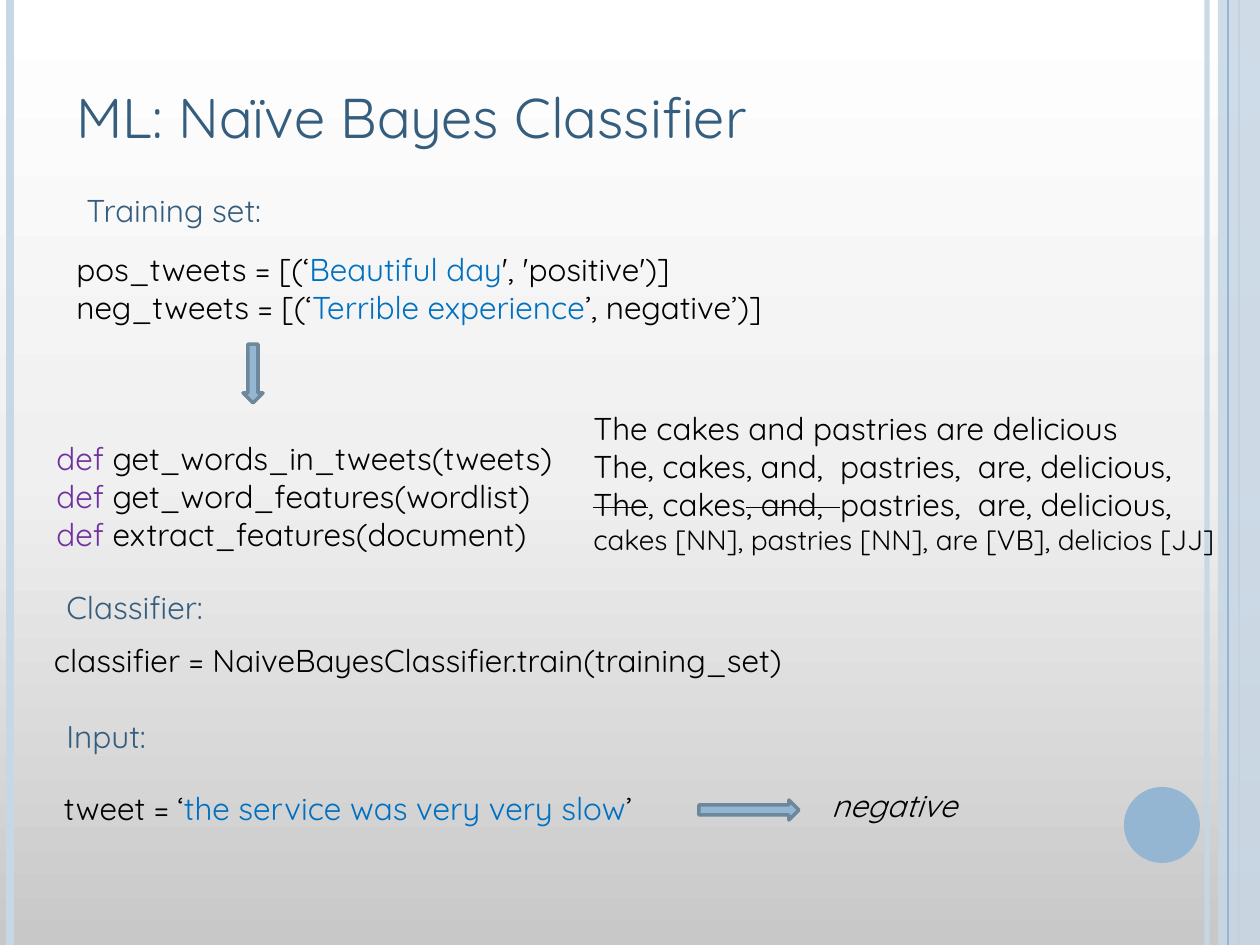
from copy import deepcopy

from lxml import etree
from pptx import Presentation
from pptx.dml.color import RGBColor
from pptx.enum.shapes import MSO_CONNECTOR, MSO_SHAPE
from pptx.enum.text import MSO_ANCHOR, MSO_AUTO_SIZE, PP_ALIGN
from pptx.oxml.ns import qn
from pptx.util import Pt

STRAIGHT = MSO_CONNECTOR.STRAIGHT
RECTANGLE, OVAL = MSO_SHAPE.RECTANGLE, MSO_SHAPE.OVAL
DOWN_ARROW, RIGHT_ARROW = MSO_SHAPE.DOWN_ARROW, MSO_SHAPE.RIGHT_ARROW
TOP, MIDDLE = MSO_ANCHOR.TOP, MSO_ANCHOR.MIDDLE
NO_AUTOFIT = MSO_AUTO_SIZE.NONE
LEFT = PP_ALIGN.LEFT

PX = 914400 / 126
WIDTH, HEIGHT = 1260, 945
FONT = "Quicksand"
COLORS = {
    "heading": "355D7E",
    "text": "000000",
    "string": "0070C0",
    "keyword": "7030A0",
    "accent": "94B6D2",
    "accent_edge": "6D879B",
    "pale": "C8D7E5",
    "top": "FFFFFF",
    "middle": "F0F0F0",
    "bottom": "C8C8C8",
}


def emu(*lengths):
    return [round(length * PX) for length in lengths]


def color(name):
    return RGBColor.from_string(COLORS[name])


def set_alpha(element, percent):
    fill_color = element.find(".//" + qn("a:srgbClr"))
    etree.SubElement(fill_color, qn("a:alpha"), val=str(percent * 1000))


def style_run(run, name="text", size=18, italic=False, strike=False):
    run.font.name = FONT
    run.font.size = Pt(size)
    run.font.color.rgb = color(name)
    if italic:
        run.font.italic = True
    if strike:
        run.font._element.set("strike", "sngStrike")


def add_figure(slide, preset, box, fill, edge=None):
    figure = slide.shapes.add_shape(preset, *emu(*box))
    figure.shadow.inherit = False
    figure.fill.solid()
    figure.fill.fore_color.rgb = color(fill)
    if edge:
        figure.line.color.rgb = color(edge)
        figure.line.width = Pt(2)
    else:
        figure.line.fill.background()
    return figure


def add_rule(slide, x, name, width):
    rule = slide.shapes.add_connector(STRAIGHT, *emu(x, 0, x, HEIGHT))
    rule.line.color.rgb = color(name)
    rule.line.width = Pt(width)
    etree.SubElement(rule._element.spPr, qn("a:effectLst"))
    return rule


def add_lines(slide, box, lines, flush=False):
    frame = slide.shapes.add_textbox(*emu(*box)).text_frame
    frame.word_wrap = True
    if flush:
        frame.vertical_anchor = MIDDLE
        frame.margin_left = frame.margin_right = 0
        frame.margin_top = frame.margin_bottom = 0
    for index, line in enumerate(lines):
        paragraph = frame.add_paragraph() if index else frame.paragraphs[0]
        for text, style in line:
            run = paragraph.add_run()
            run.text = text
            style_run(run, **style)


def add_background(slide):
    fill = slide.background.fill
    fill.gradient()
    fill.gradient_angle = 270
    stop_list = slide.element.find(".//" + qn("a:gsLst"))
    stop_list.insert(1, deepcopy(stop_list[0]))
    for stop, name, position in zip(
        fill.gradient_stops, ("top", "middle", "bottom"), (0, 0.5, 1)
    ):
        stop.color.rgb = color(name)
        stop.position = position


def add_side_bands(slide):
    inner_rule = add_rule(slide, 1207, "pale", 3)
    set_alpha(inner_rule._element.spPr, 93)
    add_rule(slide, 10, "pale", 4.5)
    add_rule(slide, 1239, "accent", 1.5)
    band = add_figure(slide, RECTANGLE, (1218, 0, 42, HEIGHT), "pale")
    set_alpha(band._element.spPr, 87)
    add_rule(slide, 1228, "accent", 0.75)
    add_figure(slide, OVAL, (1124, 787, 76, 76), "accent")


def add_title(slide, box):
    title = slide.shapes.title
    title.left, title.top, title.width, title.height = emu(*box)
    frame = title.text_frame
    frame.text = "ML: Naïve Bayes Classifier"
    frame.auto_size = NO_AUTOFIT
    frame.vertical_anchor = TOP
    frame.paragraphs[0].alignment = LEFT
    style_run(frame.paragraphs[0].runs[0], "heading", 32)


def add_heading(slide, box, text):
    add_lines(slide, box, [[(text, {"name": "heading"})]])


def add_training_set(slide, x, y):
    string = {"name": "string"}
    add_heading(slide, (x + 10, y, 205, 50), "Training set:")
    add_lines(slide, (x, y + 59, 903, 89), [
        [("pos_tweets = [(‘", {}), ("Beautiful day", string), ("', 'positive')]", {})],
        [("neg_tweets = [(‘", {}), ("Terrible experience", string),
         ("’, negative’)]", {})],
    ])
    add_figure(slide, DOWN_ARROW, (x + 179, y + 159, 20, 59), "accent", "accent_edge")


def add_features(slide, x, y):
    functions = (
        "get_words_in_tweets(tweets)",
        "get_word_features(wordlist)",
        "extract_features(document)",
    )
    add_lines(slide, (x, y + 30, 576, 127), [
        [("def ", {"name": "keyword"}), (function, {})] for function in functions
    ])
    struck = {"strike": True}
    add_lines(slide, (x + 537, y, 679, 199), [
        [("The cakes and pastries are delicious", {})],
        [("The, cakes, and,  pastries,  are, delicious,", {})],
        [("The", struck), (", cakes", {}), (", and,  ", struck),
         ("pastries,  are, delicious,", {})],
        [("cakes [NN], pastries [NN], are [VB], delicios [JJ]", {"size": 16})],
    ])


def add_classifier(slide, x, y):
    add_heading(slide, (x, y, 166, 50), "Classifier:")
    add_lines(slide, (x, y + 59, 759, 38), [
        [("classifier = NaiveBayesClassifier.train(training_set)", {})],
    ], flush=True)


def add_input(slide, x, y):
    add_heading(slide, (x, y, 113, 50), "Input:")
    add_lines(slide, (x + 10, y + 78, 612, 38), [
        [("tweet = ‘", {}), ("the service was very very slow", {"name": "string"}),
         ("’", {})],
    ], flush=True)
    add_figure(slide, RIGHT_ARROW, (x + 645, y + 89, 100, 20), "accent", "accent_edge")
    add_lines(slide, (x + 765, y + 69, 228, 50), [[("negative", {"italic": True})]])


def main():
    deck = Presentation()
    deck.slide_width, deck.slide_height = emu(WIDTH, HEIGHT)
    slide = deck.slides.add_slide(deck.slide_layouts[5])
    add_background(slide)
    add_side_bands(slide)
    add_title(slide, (64, 76, 1022, 81))
    add_training_set(slide, 64, 185)
    add_features(slide, 44, 403)
    add_classifier(slide, 54, 582)
    add_input(slide, 54, 711)
    deck.save("out.pptx")


if __name__ == "__main__":
    main()
